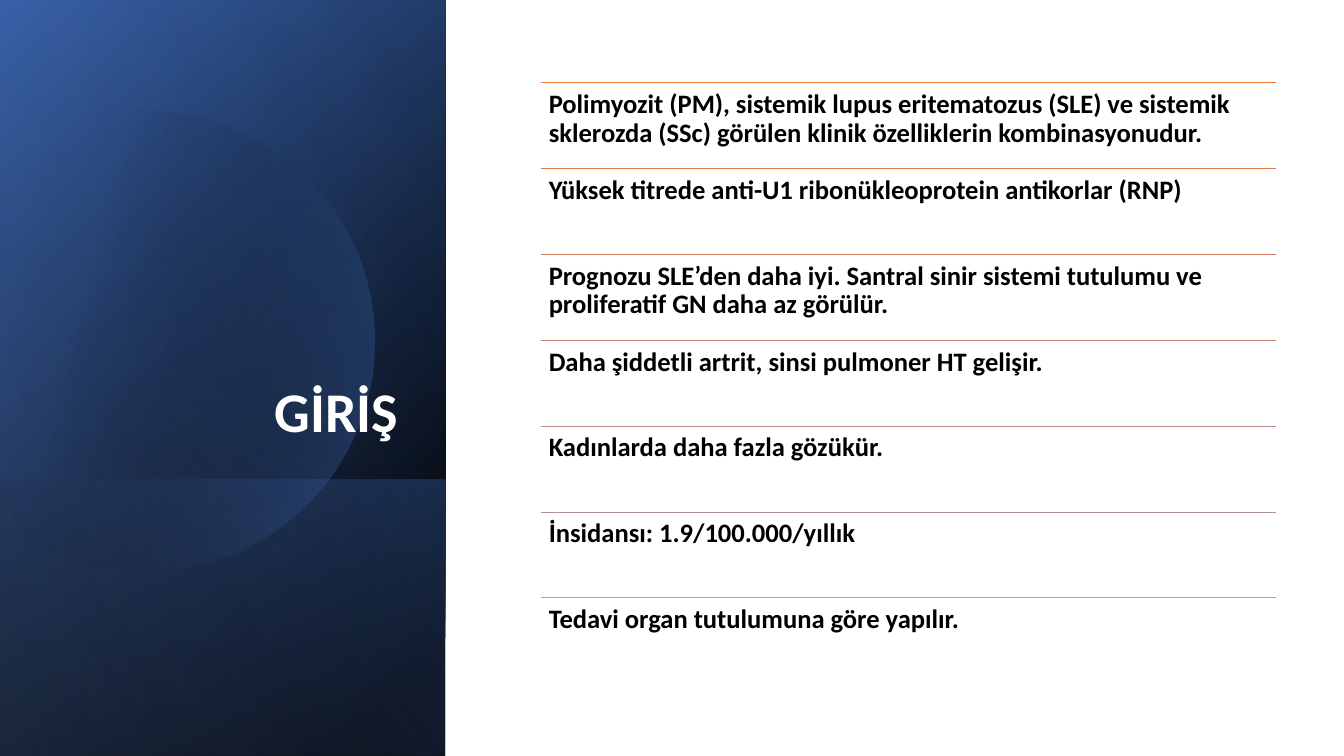
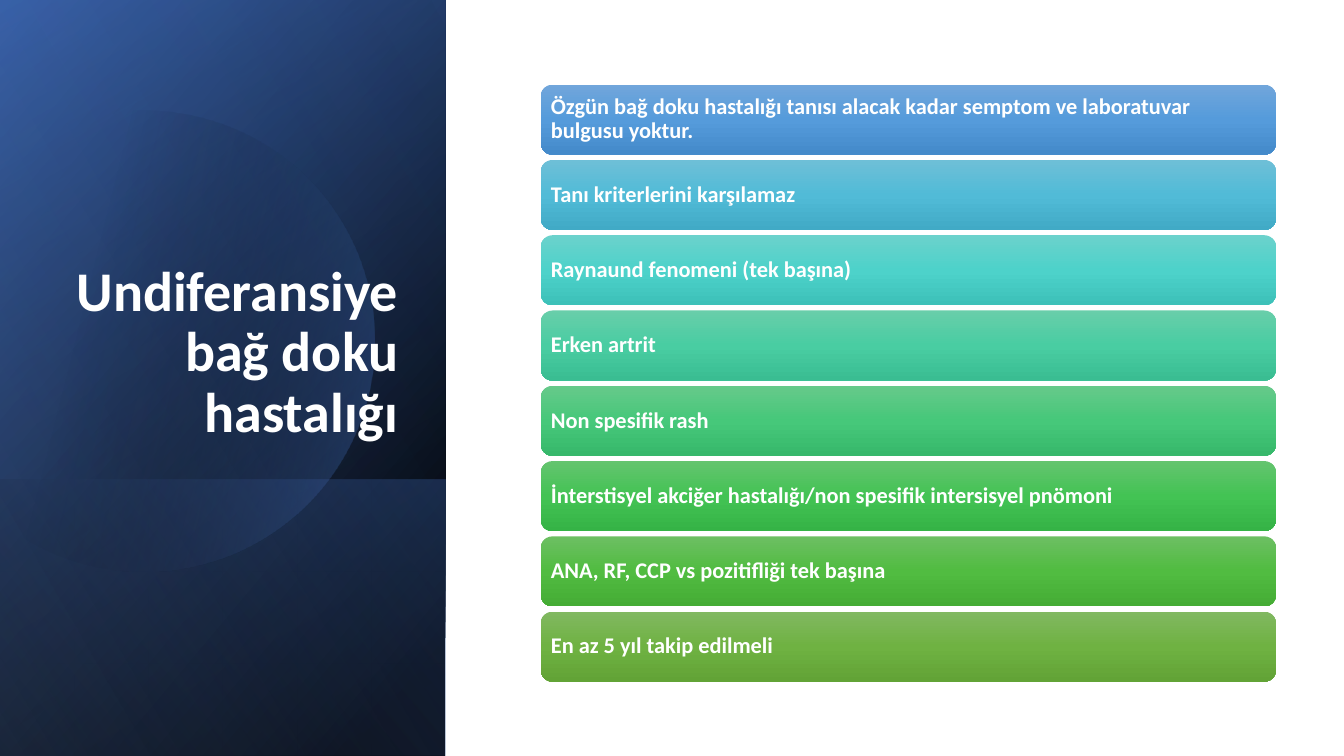
import math
from dataclasses import dataclass

from lxml import etree
from pptx import Presentation
from pptx.dml.color import RGBColor
from pptx.enum import shapes, text
from pptx.oxml import ns
from pptx.util import Pt


@dataclass(frozen=True)
class Theme:
    font: str = "Calibri"
    title_size: float = 40
    statement_size: float = 19
    bar_size: float = 16
    light: str = "FFFFFF"
    dark: str = "000000"
    navy: str = "2F5597"
    blue: str = "4472C4"
    pale_blue: str = "8FAADC"


THEME = Theme()
SLIDE_WIDTH, SLIDE_HEIGHT = 960, 540
PANEL_WIDTH = 318.24
CONTENT_LEFT, CONTENT_WIDTH = 386.3, 525.2

# Panel layers: top, height, gradient angle, stops (position, colour, opacity)
BASE_LAYERS = [
    (0, SLIDE_HEIGHT, 50, [(8, THEME.dark, 100), (100, THEME.navy, 100)]),
    (0, SLIDE_HEIGHT, 30, [(0, THEME.dark, 0), (99, THEME.blue, 46)]),
    (342.7, 197.3, 130, [(2, THEME.blue, 29), (100, THEME.dark, 30)]),
]
TOP_LAYER = (0, SLIDE_HEIGHT, 120, [(0, THEME.dark, 0), (99, THEME.pale_blue, 11)])

STATEMENTS = [
    ("Polimyozit (PM), sistemik lupus eritematozus (SLE) ve sistemik sklerozda (SSc) "
     "görülen klinik özelliklerin kombinasyonudur.", "ED7D31"),
    ("Yüksek titrede anti-U1 ribonükleoprotein antikorlar (RNP)", "DE7A47"),
    ("Prognozu SLE’den daha iyi. Santral sinir sistemi tutulumu ve proliferatif GN "
     "daha az görülür.", "D17B5C"),
    ("Daha şiddetli artrit, sinsi pulmoner HT gelişir.", "C48170"),
    ("Kadınlarda daha fazla gözükür.", "B98A82"),
    ("İnsidansı: 1.9/100.000/yıllık", "AE9694"),
    ("Tedavi organ tutulumuna göre yapılır.", "A5A5A5"),
]

BARS = [
    ("Özgün bağ doku hastalığı tanısı alacak kadar semptom ve laboratuvar bulgusu yoktur.",
     ("71A6DB", "559BDB", "448ACA")),
    ("Tanı kriterlerini karşılamaz", ("6EBFD7", "51BBD7", "41AAC6")),
    ("Raynaund fenomeni (tek başına)", ("6BD2CC", "4DD2CA", "3DC1B9")),
    ("Erken artrit", ("68CEAA", "49CDA2", "3ABD92")),
    ("Non spesifik rash", ("66C98A", "46C87A", "37B86B")),
    ("İnterstisyel akciğer hastalığı/non spesifik intersisyel pnömoni",
     ("64C46F", "43C354", "35B346")),
    ("ANA, RF, CCP vs pozitifliği tek başına", ("6CBF62", "51BC41", "45AC35")),
    ("En az 5 yıl takip edilmeli", ("81B861", "6FB242", "62A336")),
]


def paint_gradient(shape, angle, stops):
    """Fill without outline; the angle is clockwise, stops are (position, colour, opacity)."""
    shape.shadow.inherit = False
    shape.line.fill.background()
    shape.fill.gradient()
    shape.fill.gradient_angle = 360 - angle
    stop_list = shape._element.spPr.find(".//" + ns.qn("a:gsLst"))
    for old_stop in list(stop_list):
        stop_list.remove(old_stop)
    for position, colour, opacity in stops:
        stop = etree.SubElement(stop_list, ns.qn("a:gs"), pos=str(position * 1000))
        rgb = etree.SubElement(stop, ns.qn("a:srgbClr"), val=colour)
        if opacity < 100:
            etree.SubElement(rgb, ns.qn("a:alpha"), val=str(opacity * 1000))


def write_text(shape, content, size, colour, inset, anchor, align=text.PP_ALIGN.LEFT):
    frame = shape.text_frame
    frame.word_wrap = True
    frame.vertical_anchor = anchor
    frame.margin_left = frame.margin_right = Pt(inset[0])
    frame.margin_top = frame.margin_bottom = Pt(inset[1])
    paragraph = frame.paragraphs[0]
    paragraph.text = content
    paragraph.alignment = align
    paragraph.line_spacing = 0.9
    paragraph.font.name = THEME.font
    paragraph.font.size = Pt(size)
    paragraph.font.bold = True
    paragraph.font.color.rgb = RGBColor.from_string(colour)


def add_panel_layer(slide, top, height, angle, stops):
    """Cover part of the panel with a rectangle turned a quarter and mirrored."""
    shift = (PANEL_WIDTH - height) / 2
    layer = slide.shapes.add_shape(
        shapes.MSO_SHAPE.RECTANGLE, Pt(shift), Pt(top - shift), Pt(height), Pt(PANEL_WIDTH))
    layer.rotation = 90
    layer._element.spPr.find(ns.qn("a:xfrm")).set("flipH", "1")
    paint_gradient(layer, angle, stops)


def add_clipped_circle(slide):
    """Draw the large circle, cut off just outside the left slide edge."""
    centre_x, centre_y, radius, cut_x, steps = 103, 243.4, 164.8, -10.8, 120
    limit = math.acos((cut_x - centre_x) / radius)
    angles = [limit * (2 * step / steps - 1) for step in range(steps + 1)]
    points = [(Pt(centre_x + radius * math.cos(angle)), Pt(centre_y + radius * math.sin(angle)))
              for angle in angles]
    builder = slide.shapes.build_freeform(*points[0])
    builder.add_line_segments(points[1:], close=True)
    paint_gradient(builder.convert_to_shape(), 14, [(29, THEME.dark, 0), (100, THEME.blue, 43)])


def add_titled_slide(presentation, title):
    slide = presentation.slides.add_slide(presentation.slide_layouts[6])
    for layer in BASE_LAYERS:
        add_panel_layer(slide, *layer)
    add_clipped_circle(slide)
    add_panel_layer(slide, *TOP_LAYER)
    box = slide.shapes.add_textbox(Pt(46), Pt(132.5), Pt(245.5), Pt(188.6))
    write_text(box, title, THEME.title_size, THEME.light, (7.2, 3.6),
               text.MSO_ANCHOR.BOTTOM, text.PP_ALIGN.RIGHT)
    return slide


def add_rule(slide, top, colour):
    rule = slide.shapes.add_connector(
        shapes.MSO_CONNECTOR.STRAIGHT,
        Pt(CONTENT_LEFT), Pt(top), Pt(CONTENT_LEFT + CONTENT_WIDTH), Pt(top))
    rule.line.color.rgb = RGBColor.from_string(colour)
    rule.line.width = Pt(0.5)
    etree.SubElement(rule._element.spPr, ns.qn("a:effectLst"))


def add_ruled_statements(slide, statements, top=59, pitch=61.33):
    for index, (statement, colour) in enumerate(statements):
        row_top = top + index * pitch
        add_rule(slide, row_top, colour)
        box = slide.shapes.add_textbox(
            Pt(CONTENT_LEFT), Pt(row_top), Pt(CONTENT_WIDTH), Pt(pitch))
        write_text(box, statement, THEME.statement_size, THEME.dark, (5.7, 5.7),
                   text.MSO_ANCHOR.TOP)


def add_gradient_bars(slide, bars, top=60.5, height=50, gap=3.77):
    for index, (label, colours) in enumerate(bars):
        bar = slide.shapes.add_shape(
            shapes.MSO_SHAPE.ROUNDED_RECTANGLE, Pt(CONTENT_LEFT),
            Pt(top + index * (height + gap)), Pt(CONTENT_WIDTH), Pt(height))
        paint_gradient(bar, 90, [(50 * step, colour, 100) for step, colour in enumerate(colours)])
        write_text(bar, label, THEME.bar_size, THEME.light, (4.8, 4.8), text.MSO_ANCHOR.MIDDLE)


def main():
    presentation = Presentation()
    presentation.slide_width = Pt(SLIDE_WIDTH)
    presentation.slide_height = Pt(SLIDE_HEIGHT)
    add_ruled_statements(add_titled_slide(presentation, "GİRİŞ"), STATEMENTS)
    add_gradient_bars(add_titled_slide(presentation, "Undiferansiye bağ doku hastalığı"), BARS)
    presentation.save("out.pptx")


if __name__ == "__main__":
    main()
